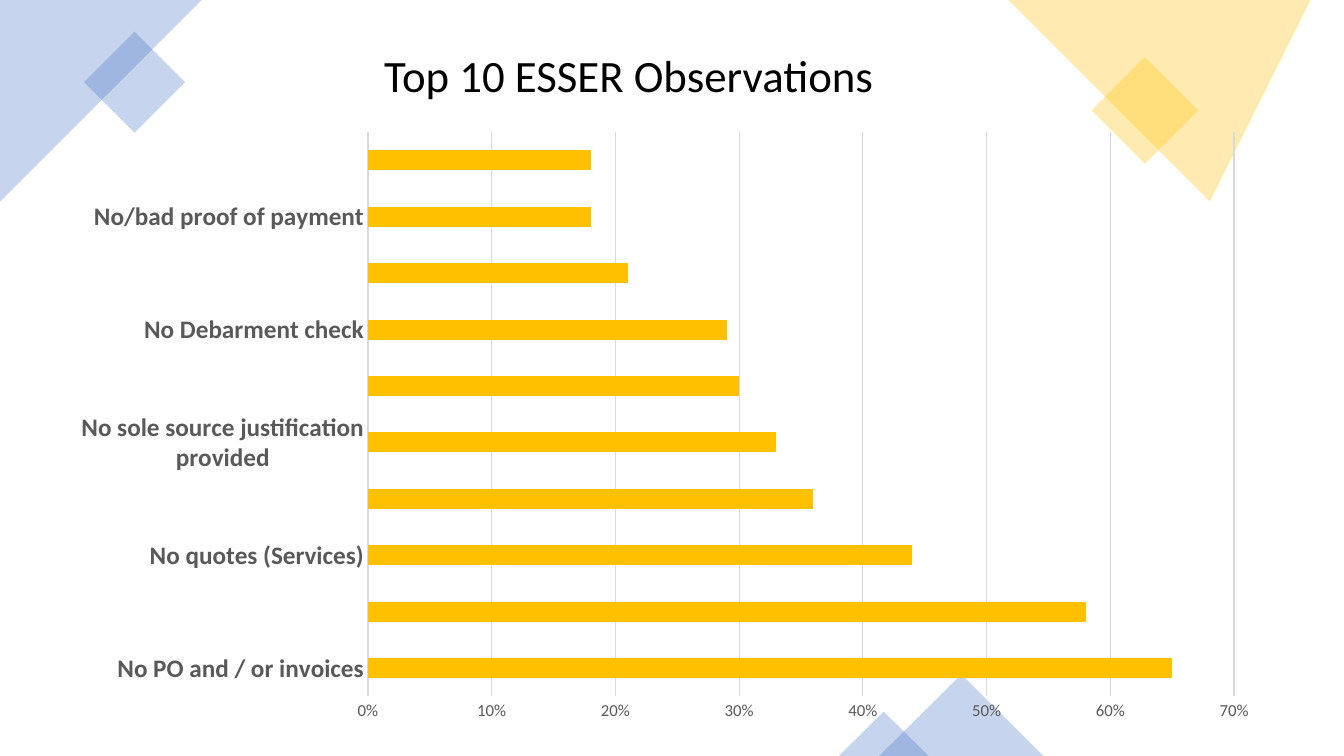
from dataclasses import dataclass

from lxml.etree import SubElement
from pptx import Presentation
from pptx.chart.data import CategoryChartData
from pptx.dml.color import RGBColor
from pptx.enum.chart import XL_CHART_TYPE, XL_TICK_MARK
from pptx.enum.shapes import MSO_SHAPE
from pptx.enum.text import MSO_ANCHOR, MSO_AUTO_SIZE, PP_ALIGN
from pptx.oxml import parse_xml
from pptx.oxml.ns import nsdecls, qn
from pptx.util import Inches, Pt

TITLE = "Top 10 ESSER Observations"
FINDINGS = [
    ("No PO and / or invoices", 0.65),
    ("No MWE steps", 0.58),
    ("No quotes (Services)", 0.44),
    ("No competitive procurement (Goods)", 0.36),
    ("No sole source justification provided", 0.33),
    ("No contract terms and conditions", 0.3),
    ("No Debarment check", 0.29),
    ("No policy against fraud, waste, and abuse", 0.21),
    ("No/bad proof of payment", 0.18),
    ("No competitive procurement docs (Services)", 0.18),
]


@dataclass(frozen=True)
class Theme:
    font: str = "Calibri"
    blue: str = "4472C4"
    gold: str = "FFC000"
    black: str = "000000"
    label: str = "595959"
    grid: str = "D9D9D9"
    alpha: int = 30
    title: int = 32
    names: int = 18
    ticks: int = 12


THEME = Theme()

# Corner outlines: colour, corner points in inches
CORNERS = [
    (THEME.blue, [(0, 0), (1.53, 0), (1.83, 0.3), (0.41, 1.71), (0, 1.3)]),
    (THEME.gold, [(13.33, 0), (10.23, 0), (11.93, 1.62), (13.33, 0.28)]),
]
# Preset shapes: kind, colour, box in inches, rotation
ACCENTS = [
    (MSO_SHAPE.RECTANGLE, THEME.blue, (0.98, 0.46, 0.71, 0.71), 315),
    (MSO_SHAPE.RECTANGLE, THEME.gold, (10.98, 0.72, 0.75, 0.75), 315),
    (MSO_SHAPE.ISOSCELES_TRIANGLE, THEME.blue, (8.72, 6.69, 1.63, 0.81), 0),
    (MSO_SHAPE.ISOSCELES_TRIANGLE, THEME.blue, (8.32, 7.06, 0.89, 0.44), 0),
]
TITLE_BOX = (3.71, 0.42, 6.8, 0.64)
CHART_BOX = (0.7, 1.19, 11.93, 6.09)
PLOT_BOX = (3.65, 1.31, 8.59, 5.6)


def rgb(code):
    return RGBColor.from_string(code)


def inches(box):
    return [Inches(n) for n in box]


def style(font, size, color, bold=False):
    font.name, font.size, font.bold = THEME.font, Pt(size), bold
    font.color.rgb = rgb(color)


def tint(shape, color):
    """Give a shape a see-through fill with no outline or shadow."""
    shape.shadow.inherit = False
    shape.line.fill.background()
    shape.fill.solid()
    shape.fill.fore_color.rgb = rgb(color)
    fill = shape.fill._xPr.find(qn("a:solidFill"))
    SubElement(fill[0], qn("a:alpha"), val=str(THEME.alpha * 1000))


def rule(line):
    line.color.rgb = rgb(THEME.grid)
    line.width = Pt(0.75)


def decorate(slide):
    for color, points in CORNERS:
        path = slide.shapes.build_freeform(*points[0], scale=Inches(1))
        path.add_line_segments(points[1:], close=True)
        tint(path.convert_to_shape(), color)
    for kind, color, box, turn in ACCENTS:
        shape = slide.shapes.add_shape(kind, *inches(box))
        shape.rotation = turn
        tint(shape, color)


def add_title(slide):
    title = slide.shapes.title
    title.left, title.top, title.width, title.height = inches(TITLE_BOX)
    frame = title.text_frame
    frame.text = TITLE
    frame.auto_size = MSO_AUTO_SIZE.SHAPE_TO_FIT_TEXT
    frame.vertical_anchor = MSO_ANCHOR.MIDDLE
    frame.paragraphs[0].alignment = PP_ALIGN.LEFT
    style(frame.paragraphs[0].runs[0].font, THEME.title, THEME.black)


def place_plot(chart):
    """Fix the inner plot area as fractions of the chart box."""
    left, top, wide, high = CHART_BOX
    x, y, w, h = PLOT_BOX
    parts = {"x": (x - left) / wide, "y": (y - top) / high,
             "w": w / wide, "h": h / high}
    marks = "".join(f'<c:{key}Mode val="edge"/>' for key in "xy")
    sizes = "".join(f'<c:{key} val="{val:.4f}"/>' for key, val in parts.items())
    layout = parse_xml(
        f'<c:layout {nsdecls("c")}><c:manualLayout>'
        f'<c:layoutTarget val="inner"/>{marks}{sizes}'
        "</c:manualLayout></c:layout>")
    area = chart._chartSpace.chart.plotArea
    for old in area.findall(qn("c:layout")):
        area.remove(old)
    area.insert(0, layout)


def add_bars(slide):
    data = CategoryChartData(number_format="0%")
    names, rates = zip(*FINDINGS)
    data.categories = names
    data.add_series("Series 1", rates)
    chart = slide.shapes.add_chart(
        XL_CHART_TYPE.BAR_CLUSTERED, *inches(CHART_BOX), data).chart
    chart.has_legend = chart.has_title = False
    style(chart.font, 10, THEME.black)

    plot = chart.plots[0]
    plot.gap_width = 182
    plot.vary_by_categories = False
    bars = plot.series[0].format.fill
    bars.solid()
    bars.fore_color.rgb = rgb(THEME.gold)

    cats, vals = chart.category_axis, chart.value_axis
    for axis in (cats, vals):
        axis.major_tick_mark = axis.minor_tick_mark = XL_TICK_MARK.NONE
    style(cats.tick_labels.font, THEME.names, THEME.label, bold=True)
    style(vals.tick_labels.font, THEME.ticks, THEME.label)
    rule(cats.format.line)
    rule(vals.major_gridlines.format.line)
    vals.format.line.fill.background()
    vals.minimum_scale, vals.maximum_scale, vals.major_unit = 0, 0.7, 0.1
    vals.tick_labels.number_format = "0%"
    vals.tick_labels.number_format_is_linked = False
    place_plot(chart)


def main():
    deck = Presentation()
    deck.slide_width, deck.slide_height = Inches(13.33), Inches(7.5)
    slide = deck.slides.add_slide(deck.slide_layouts.get_by_name("Title Only"))
    decorate(slide)
    add_title(slide)
    add_bars(slide)
    deck.save("out.pptx")


if __name__ == "__main__":
    main()
